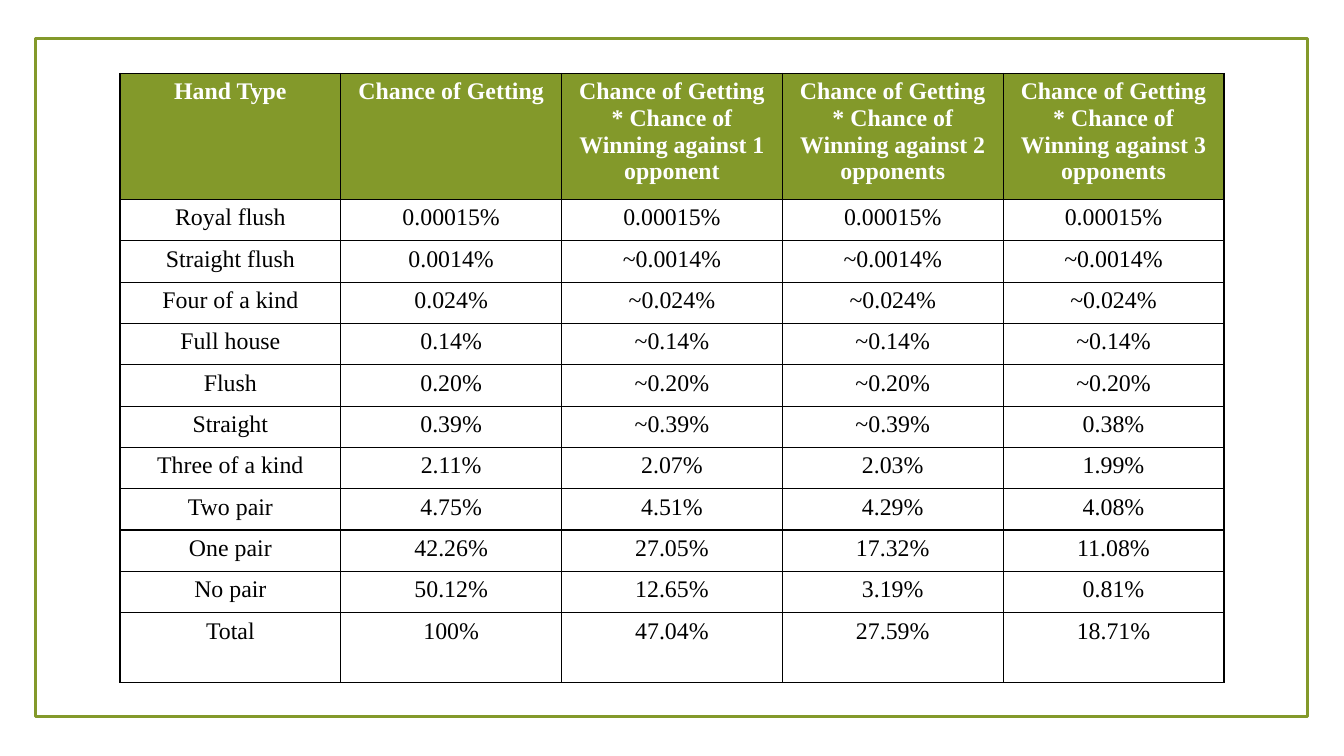
from lxml.etree import SubElement
from pptx import Presentation
from pptx.dml.color import RGBColor
from pptx.enum.shapes import MSO_SHAPE as Preset
from pptx.enum.text import PP_ALIGN as Align
from pptx.oxml.ns import qn
from pptx.util import Inches, Pt

SLIDE_WIDTH, SLIDE_HEIGHT = 13.33, 7.5
GREEN, WHITE, BLACK = "83992A", "FFFFFF", "000000"
FONT = "Times New Roman"

# Table grid in inches
COLUMN_WIDTH = 2.19
HEADER_HEIGHT, HAND_HEIGHT, TOTAL_HEIGHT = 1.25, 0.41, 0.69

WINNING = "Chance of Getting * Chance of Winning against"
HEADER = ["Hand Type", "Chance of Getting", f"{WINNING} 1 opponent",
          f"{WINNING} 2 opponents", f"{WINNING} 3 opponents"]
HANDS = [
    ["Royal flush", "0.00015%", "0.00015%", "0.00015%", "0.00015%"],
    ["Straight flush", "0.0014%", "~0.0014%", "~0.0014%", "~0.0014%"],
    ["Four of a kind", "0.024%", "~0.024%", "~0.024%", "~0.024%"],
    ["Full house", "0.14%", "~0.14%", "~0.14%", "~0.14%"],
    ["Flush", "0.20%", "~0.20%", "~0.20%", "~0.20%"],
    ["Straight", "0.39%", "~0.39%", "~0.39%", "0.38%"],
    ["Three of a kind", "2.11%", "2.07%", "2.03%", "1.99%"],
    ["Two pair", "4.75%", "4.51%", "4.29%", "4.08%"],
    ["One pair", "42.26%", "27.05%", "17.32%", "11.08%"],
    ["No pair", "50.12%", "12.65%", "3.19%", "0.81%"],
]
TOTAL = ["Total", "100%", "47.04%", "27.59%", "18.71%"]


def color(hex_string):
    return RGBColor.from_string(hex_string)


def add_frame(slide, left, top, width, height):
    frame = slide.shapes.add_shape(
        Preset.RECTANGLE, Inches(left), Inches(top), Inches(width), Inches(height))
    frame.shadow.inherit = False
    frame.fill.background()
    frame.line.color.rgb = color(GREEN)
    frame.line.width = Pt(2)


def set_borders(cell, hex_string, points):
    properties = cell._tc.get_or_add_tcPr()
    for index, side in enumerate(("lnL", "lnR", "lnT", "lnB")):
        # Border lines come before the fill in the cell properties
        line = SubElement(properties, qn(f"a:{side}"), w=str(Pt(points)))
        properties.insert(index, line)
        fill = SubElement(line, qn("a:solidFill"))
        SubElement(fill, qn("a:srgbClr"), val=hex_string)


def fill_cell(cell, text, is_header):
    cell.fill.solid()
    cell.fill.fore_color.rgb = color(GREEN if is_header else WHITE)
    set_borders(cell, BLACK, 1)
    cell.margin_left = cell.margin_right = Inches(0.09)
    cell.margin_top = cell.margin_bottom = Inches(0.05)
    paragraph = cell.text_frame.paragraphs[0]
    paragraph.alignment = Align.CENTER
    run = paragraph.add_run()
    run.text = text
    run.font.name = FONT
    run.font.size = Pt(17)
    run.font.bold = is_header
    run.font.color.rgb = color(WHITE if is_header else BLACK)


def add_odds_table(slide, left, top):
    rows = [HEADER, *HANDS, TOTAL]
    heights = [HEADER_HEIGHT, *[HAND_HEIGHT] * len(HANDS), TOTAL_HEIGHT]
    table = slide.shapes.add_table(
        len(rows), len(HEADER), Inches(left), Inches(top),
        Inches(COLUMN_WIDTH * len(HEADER)), Inches(sum(heights))).table
    for column in table.columns:
        column.width = Inches(COLUMN_WIDTH)
    for row_index, (texts, height) in enumerate(zip(rows, heights)):
        table.rows[row_index].height = Inches(height)
        for column_index, text in enumerate(texts):
            fill_cell(table.cell(row_index, column_index), text, row_index == 0)


def main():
    presentation = Presentation()
    presentation.slide_width = Inches(SLIDE_WIDTH)
    presentation.slide_height = Inches(SLIDE_HEIGHT)
    slide = presentation.slides.add_slide(presentation.slide_layouts[6])

    # Green frame around the slide, with the odds table inside
    add_frame(slide, 0.35, 0.38, 12.62, 6.73)
    add_odds_table(slide, 1.19, 0.73)

    presentation.save("out.pptx")


if __name__ == "__main__":
    main()
